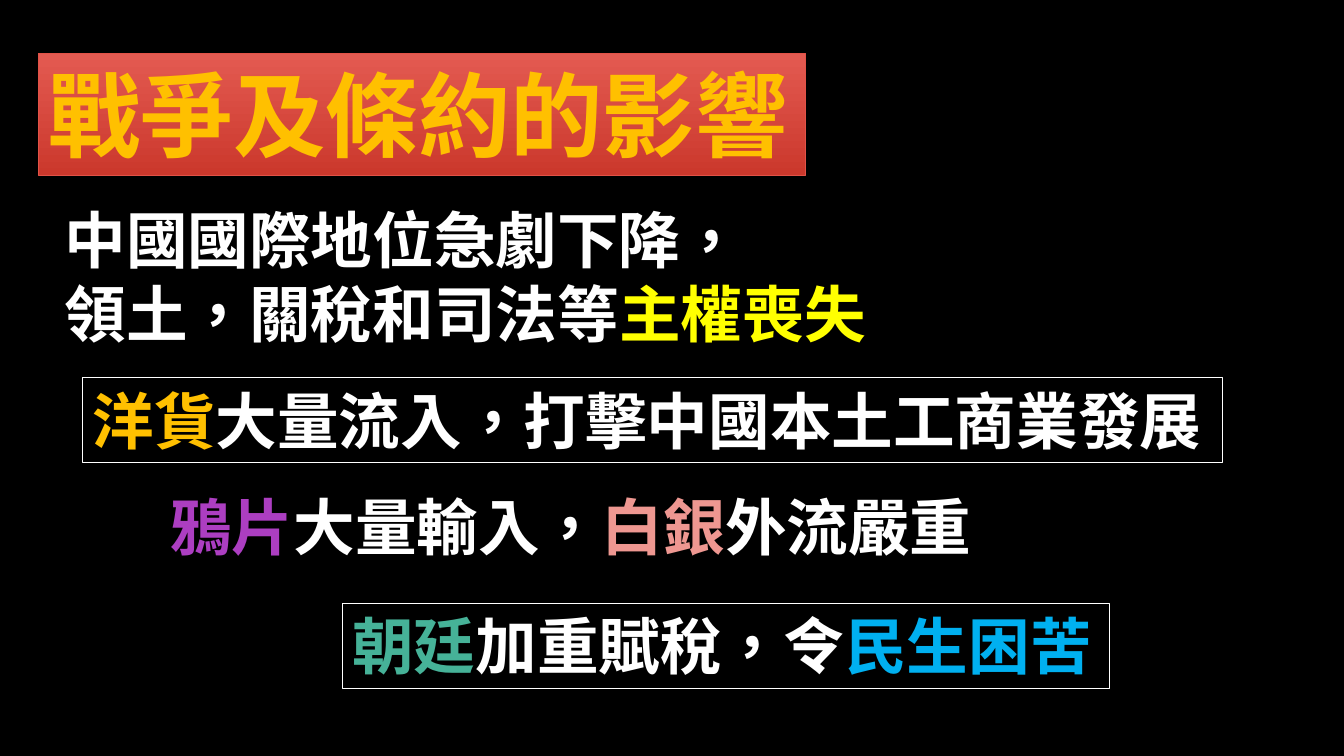
import pptx
import pptx.util
import pptx.dml.color
import pptx.enum.lang
import pptx.enum.shapes
import pptx.enum.text
import pptx.oxml
import pptx.oxml.ns

Pt = pptx.util.Pt
RGBColor = pptx.dml.color.RGBColor

BLACK = RGBColor(0x00, 0x00, 0x00)
WHITE = RGBColor(0xFF, 0xFF, 0xFF)
GOLD = RGBColor(0xFF, 0xC0, 0x00)
YELLOW = RGBColor(0xFF, 0xFF, 0x00)
PURPLE = RGBColor(0xAC, 0x3E, 0xC1)
PINK = RGBColor(0xEE, 0x97, 0x91)
GREEN = RGBColor(0x46, 0xB2, 0x98)
BLUE = RGBColor(0x00, 0xB0, 0xF0)
RED_TOP = RGBColor(0xE3, 0x5A, 0x51)
RED_BOTTOM = RGBColor(0xCB, 0x38, 0x2C)
RED_LINE = RGBColor(0xE2, 0x52, 0x47)

FONT = "Noto Sans CJK SC"
SHADOW = (
    '<a:effectLst %s><a:outerShdw blurRad="50800" dist="38100" dir="5400000" rotWithShape="0">'
    '<a:srgbClr val="000000"><a:alpha val="35000"/></a:srgbClr></a:outerShdw></a:effectLst>'
    % pptx.oxml.ns.nsdecls("a")
)

# Each effect: box (left, top, width, height), outlined or not, lines of (text, colour)
EFFECTS = [
    ((39, 140.5, 592, 114), False, [
        [("中國國際地位急劇下降，", WHITE)],
        [("領土，關稅和司法等", WHITE), ("主權喪失", YELLOW)]]),
    ((59, 270, 814.5, 60.5), True, [
        [("洋貨", GOLD), ("大量流入，打擊中國本土工商業發展", WHITE)]]),
    ((114.5, 345.5, 592, 60.5), False, [
        [("鴉片", PURPLE), ("大量輸入，", WHITE), ("白銀", PINK), ("外流嚴重", WHITE)]]),
    ((244.5, 431, 548, 60.5), True, [
        [("朝廷", GREEN), ("加重賦稅，令", WHITE), ("民生困苦", BLUE)]]),
]


def add_run(p, text, size=44, color=WHITE, bold=True):
    r = p.add_run()
    r.text = text
    r.font.size = Pt(size)
    r.font.bold = bold
    r.font.color.rgb = color
    r.font.name = FONT
    r.font.language_id = pptx.enum.lang.MSO_LANGUAGE_ID.CHINESE_HONG_KONG_SAR
    # East Asian typeface
    ea = pptx.oxml.parse_xml('<a:ea %s typeface="%s"/>' % (pptx.oxml.ns.nsdecls("a"), FONT))
    r.font._element.append(ea)


def fill_text(sp, lines, **fmt):
    tf = sp.text_frame
    tf.word_wrap = False
    tf.auto_size = pptx.enum.text.MSO_AUTO_SIZE.SHAPE_TO_FIT_TEXT
    tf.vertical_anchor = pptx.enum.text.MSO_ANCHOR.TOP
    for i, line in enumerate(lines):
        p = tf.add_paragraph() if i else tf.paragraphs[0]
        p.alignment = pptx.enum.text.PP_ALIGN.LEFT
        for text, color in line:
            add_run(p, text, color=color, **fmt)


def add_title(s, box):
    sp = s.shapes.title
    sp.left, sp.top, sp.width, sp.height = map(Pt, box)
    sp.fill.gradient()
    sp.fill.gradient_angle = 270
    for stop, color, position in zip(sp.fill.gradient_stops, (RED_TOP, RED_BOTTOM), (0, 1)):
        stop.color.rgb = color
        stop.position = position
    sp.line.color.rgb = RED_LINE
    sp.line.width = Pt(0.75)
    sp._element.spPr.append(pptx.oxml.parse_xml(SHADOW))
    fill_text(sp, [[("戰爭及條約的影響", GOLD)]], size=66)


def add_effect(s, box, outlined, lines):
    box = map(Pt, box)
    if outlined:
        sp = s.shapes.add_shape(pptx.enum.shapes.MSO_SHAPE.RECTANGLE, *box)
        sp.shadow.inherit = False
        sp.fill.background()
        sp.line.color.rgb = WHITE
        sp.line.width = Pt(0.75)
    else:
        sp = s.shapes.add_textbox(*box)
    fill_text(sp, lines)


def main():
    prs = pptx.Presentation()
    prs.slide_width, prs.slide_height = Pt(960), Pt(540)
    s = prs.slides.add_slide(prs.slide_layouts[5])
    s.background.fill.solid()
    s.background.fill.fore_color.rgb = BLACK
    add_title(s, (27.5, 38, 548, 87))
    for effect in EFFECTS:
        add_effect(s, *effect)
    prs.save("out.pptx")


if __name__ == "__main__":
    main()
